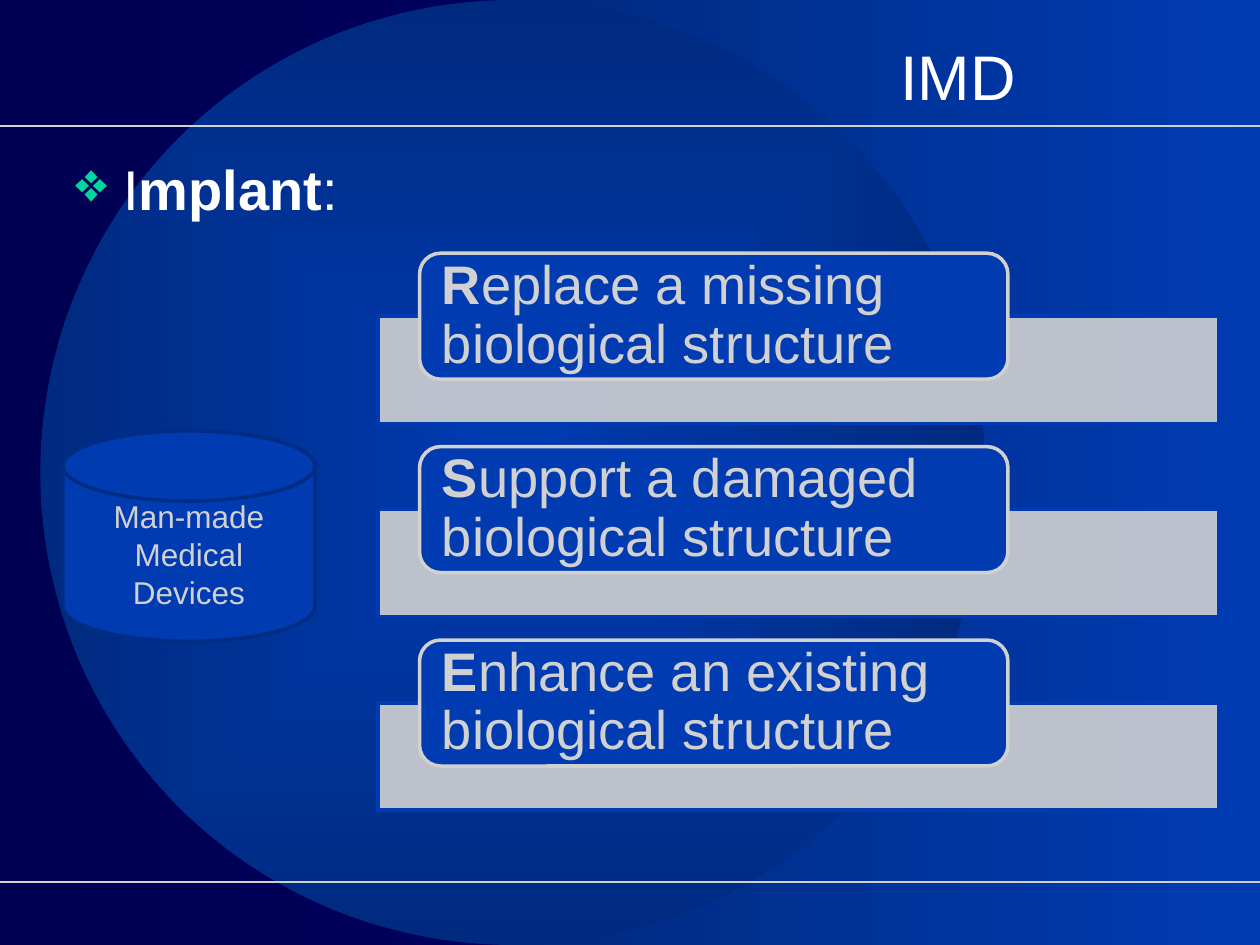
"""Builds the IMD slide on what implants do for a biological structure."""
import pptx
import pptx.dml.color
import pptx.enum.shapes
import pptx.enum.text
import pptx.oxml.ns
import pptx.oxml.xmlchemy
import pptx.util

Inches = pptx.util.Inches
Pt = pptx.util.Pt
RGBColor = pptx.dml.color.RGBColor
OxmlElement = pptx.oxml.xmlchemy.OxmlElement
qn = pptx.oxml.ns.qn
SHAPE = pptx.enum.shapes.MSO_SHAPE
ALIGN = pptx.enum.text.PP_ALIGN
ANCHOR = pptx.enum.text.MSO_ANCHOR

NIGHT = RGBColor(0x00, 0x00, 0x52)
INDIGO = RGBColor(0x00, 0x00, 0x72)
NAVY = RGBColor(0x00, 0x2A, 0x7F)
DISK_EDGE = RGBColor(0x00, 0x2C, 0x84)
BLUE = RGBColor(0x00, 0x3B, 0xB2)
SILVER = RGBColor(0xD1, 0xD1, 0xD1)
WHITE = RGBColor(0xFF, 0xFF, 0xFF)
GREEN = RGBColor(0x00, 0xD6, 0x9E)


def add_xml(parent, tag, **attributes):
    child = OxmlElement(tag)
    for name, value in attributes.items():
        child.set(name, value)
    parent.append(child)
    return child


class SlideBuilder:
    font = "Arial"

    def __init__(self, slide):
        self.slide = slide

    def gradient(self, fill, start, end):
        fill.gradient()
        fill.gradient_angle = 0
        for stop, color in zip(fill.gradient_stops, (start, end)):
            stop.color.rgb = color

    def shape(self, kind, box, fill=None, line=None, alpha=None):
        shape = self.slide.shapes.add_shape(kind, *map(Inches, box))
        shape.shadow.inherit = False
        if fill is not None:
            shape.fill.solid()
            shape.fill.fore_color.rgb = fill
        if alpha is not None:
            color = shape._element.spPr.find(qn("a:solidFill"))[0]
            add_xml(color, "a:alpha", val=str(alpha * 1000))
        if line is None:
            shape.line.fill.background()
        else:
            shape.line.color.rgb = line
            shape.line.width = Pt(2)
        return shape

    def glow(self, box, center, edge):
        disc = self.shape(SHAPE.OVAL, box)
        self.gradient(disc.fill, center, edge)
        gradient = disc._element.spPr.find(qn("a:gradFill"))
        gradient.remove(gradient.find(qn("a:lin")))
        focus = OxmlElement("a:path")
        focus.set("path", "shape")
        gradient.append(focus)
        add_xml(focus, "a:fillToRect", l="50000", t="50000", r="50000", b="50000")

    def rule(self, y):
        rule = self.slide.shapes.add_connector(
            pptx.enum.shapes.MSO_CONNECTOR.STRAIGHT,
            Inches(0), Inches(y), Inches(10), Inches(y))
        rule.line.color.rgb = SILVER
        rule.line.width = Pt(1)
        add_xml(rule._element.spPr, "a:effectLst")

    def text_box(self, box):
        return self.slide.shapes.add_textbox(*map(Inches, box))

    def set_text(self, shape, runs, size, color, frame_format=None, paragraph_format=None):
        frame = shape.text_frame
        frame.word_wrap = True
        paragraph = frame.paragraphs[0]
        for target, values in ((frame, frame_format), (paragraph, paragraph_format)):
            for name, value in (values or {}).items():
                setattr(target, name, value)
        for words, bold in runs:
            run = paragraph.add_run()
            run.text = words
            font_format = {"name": self.font, "size": Pt(size), "bold": bold}
            for name, value in font_format.items():
                setattr(run.font, name, value)
            run.font.color.rgb = color
        return paragraph

    def bullet(self, paragraph, mark, color, indent):
        properties = paragraph._p.get_or_add_pPr()
        properties.set("marL", str(Inches(indent)))
        properties.set("indent", str(-Inches(indent)))
        bullet_color = add_xml(properties, "a:buClr")
        add_xml(bullet_color, "a:srgbClr", val=str(color))
        add_xml(properties, "a:buChar", char=mark)


def main():
    deck = pptx.Presentation()
    deck.slide_width, deck.slide_height = Inches(10), Inches(7.5)
    slide = deck.slides.add_slide(deck.slide_layouts[6])
    builder = SlideBuilder(slide)

    builder.gradient(slide.background.fill, NIGHT, INDIGO)
    side_panel = builder.shape(SHAPE.RECTANGLE, (4.08, 0, 5.92, 7.5))
    builder.gradient(side_panel.fill, NAVY, BLUE)
    builder.glow((0.32, 0, 7.5, 7.5), BLUE, NAVY)
    for y in (1, 7):
        builder.rule(y)

    title = builder.text_box((0.33, 0.14, 7.83, 0.92))
    builder.set_text(title, [("IMD", False)], 36, WHITE,
                     {"vertical_anchor": ANCHOR.MIDDLE}, {"alignment": ALIGN.RIGHT})
    implant = builder.text_box((0.5, 1.18, 9, 5.74))
    heading = builder.set_text(
        implant, [("I", False), ("mplant", True), (":", False)], 32, WHITE,
        paragraph_format={"space_before": Pt(6), "alignment": ALIGN.LEFT})
    builder.bullet(heading, "❖", GREEN, 0.38)

    purpose_frame = {"vertical_anchor": ANCHOR.MIDDLE,
                     "margin_left": Inches(0.13), "margin_right": Inches(0.13),
                     "margin_top": 0, "margin_bottom": 0}
    purpose_paragraph = {"alignment": ALIGN.LEFT, "line_spacing": 0.9}
    purposes = ("Replace a missing", "Support a damaged", "Enhance an existing")
    for row, purpose in enumerate(purposes):
        top = 2.01 + row * 1.535
        builder.shape(SHAPE.RECTANGLE, (3, top + 0.5, 6.67, 0.85), SILVER, BLUE, alpha=90)
        label = builder.shape(SHAPE.ROUNDED_RECTANGLE, (3.33, top, 4.67, 1), BLUE, SILVER)
        builder.set_text(label,
                         [(purpose[0], True), (purpose[1:] + " biological structure", False)],
                         31, SILVER, purpose_frame, purpose_paragraph)

    devices = builder.shape(SHAPE.FLOWCHART_MAGNETIC_DISK, (0.5, 3.42, 2, 1.67),
                            BLUE, DISK_EDGE)
    builder.set_text(devices, [("Man-made Medical Devices", False)], 18, SILVER,
                     {"vertical_anchor": ANCHOR.MIDDLE}, {"alignment": ALIGN.CENTER})

    deck.save("out.pptx")


if __name__ == "__main__":
    main()
